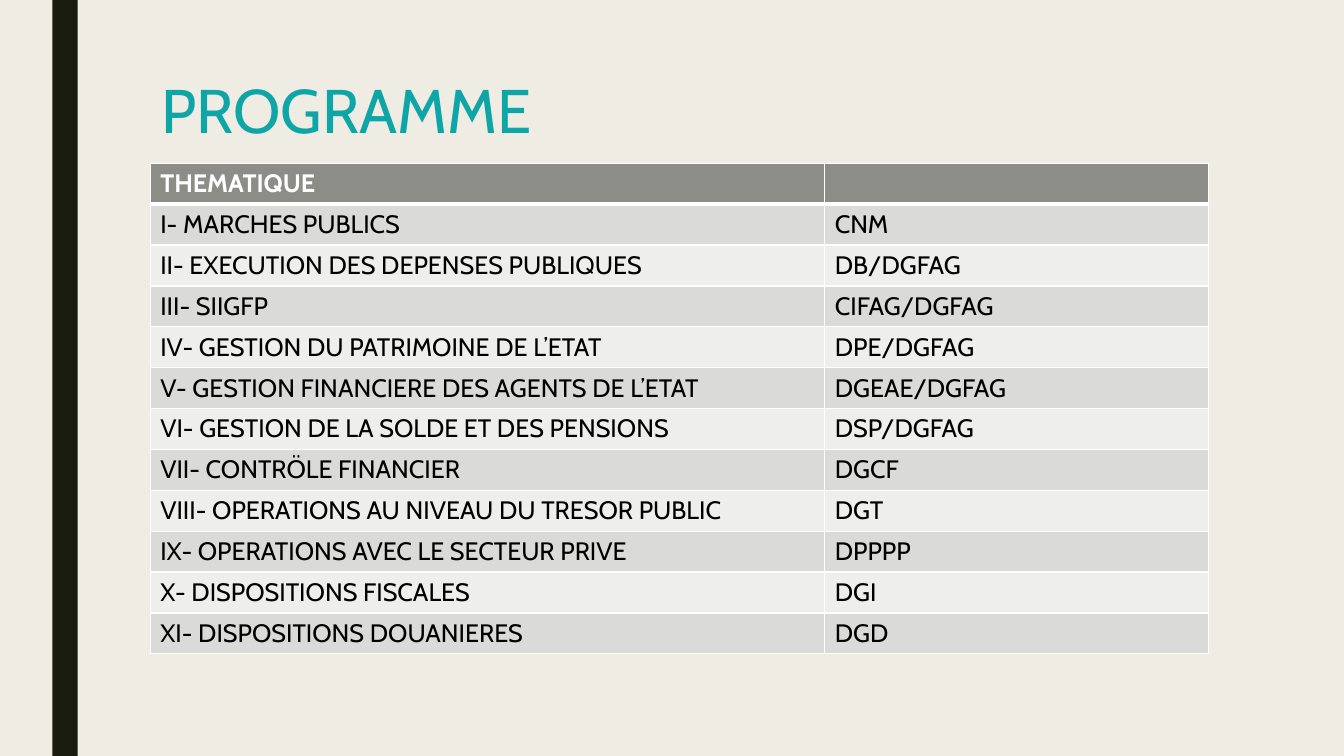
from lxml import etree
from pptx import Presentation
from pptx.dml.color import RGBColor
from pptx.enum.shapes import MSO_SHAPE
from pptx.enum.text import MSO_ANCHOR, PP_ALIGN
from pptx.oxml.ns import qn
from pptx.util import Inches, Pt

RECTANGLE = MSO_SHAPE.RECTANGLE
TOP = MSO_ANCHOR.TOP
LEFT = PP_ALIGN.LEFT

PROGRAMME = [
    ("THEMATIQUE", ""),
    ("I- MARCHES PUBLICS", "CNM"),
    ("II- EXECUTION DES DEPENSES PUBLIQUES", "DB/DGFAG"),
    ("III- SIIGFP", "CIFAG/DGFAG"),
    ("IV- GESTION DU PATRIMOINE DE L’ETAT", "DPE/DGFAG"),
    ("V- GESTION FINANCIERE DES AGENTS DE L’ETAT", "DGEAE/DGFAG"),
    ("VI- GESTION DE LA SOLDE ET DES PENSIONS", "DSP/DGFAG"),
    ("VII- CONTRÖLE FINANCIER", "DGCF"),
    ("VIII- OPERATIONS AU NIVEAU DU TRESOR PUBLIC", "DGT"),
    ("IX- OPERATIONS AVEC LE SECTEUR PRIVE", "DPPPP"),
    ("X- DISPOSITIONS FISCALES", "DGI"),
    ("XI- DISPOSITIONS DOUANIERES", "DGD"),
]


def rgb(value):
    return RGBColor.from_string(value)


class SlideBuilder:
    font = "Cabin"
    paper, ink, accent, white = "EFEDE3", "191B0E", "0DA5A5", "FFFFFF"
    header_fill, odd_fill, even_fill = "8C8D86", "DADBD9", "EEEEED"

    def __init__(self, slide):
        self.slide = slide
        background = slide.background.fill
        background.solid()
        background.fore_color.rgb = rgb(self.paper)

    def bar(self, left, top, width, height):
        shape = self.slide.shapes.add_shape(
            RECTANGLE, Inches(left), Inches(top), Inches(width), Inches(height))
        shape.shadow.inherit = False
        shape.fill.solid()
        shape.fill.fore_color.rgb = rgb(self.ink)
        shape.line.fill.background()

    def span(self, para, text, size, color, bold=False):
        para.alignment = LEFT
        span = para.add_run()
        span.text = text
        span.font.name = self.font
        span.font.size = Pt(size)
        span.font.bold = bold
        span.font.color.rgb = rgb(color)

    def title(self, text, left, top, width, height):
        box = self.slide.shapes.add_textbox(
            Inches(left), Inches(top), Inches(width), Inches(height))
        frame = box.text_frame
        frame.word_wrap = True
        frame.vertical_anchor = TOP
        para = frame.paragraphs[0]
        para.line_spacing = 0.89
        self.span(para, text, 44, self.accent)

    def border(self, cell, side, points):
        """Append one white edge; edges go in before the cell's fill."""
        properties = cell._tc.get_or_add_tcPr()
        line = etree.SubElement(properties, qn(f"a:ln{side}"), w=str(Pt(points)))
        fill = etree.SubElement(line, qn("a:solidFill"))
        etree.SubElement(fill, qn("a:srgbClr"), val=self.white)

    def table(self, rows, left, top, widths, height):
        table = self.slide.shapes.add_table(
            len(rows), len(widths), Inches(left), Inches(top),
            Inches(sum(widths)), Inches(height)).table
        for column, width in zip(table.columns, widths):
            column.width = Inches(width)
        for row_index, texts in enumerate(rows):
            for column_index, text in enumerate(texts):
                self.cell(table.cell(row_index, column_index), text, row_index)

    def cell(self, cell, text, row_index):
        header = row_index == 0
        thick = {"T": row_index == 1, "B": header}
        for side in "LRTB":
            self.border(cell, side, 3 if thick.get(side) else 1)
        band = self.odd_fill if row_index % 2 else self.even_fill
        cell.fill.solid()
        cell.fill.fore_color.rgb = rgb(self.header_fill if header else band)
        color = self.white if header else "000000"
        self.span(cell.text_frame.paragraphs[0], text, 18, color, header)


def main():
    deck = Presentation()
    deck.slide_width, deck.slide_height = Inches(13.33), Inches(7.5)
    page = SlideBuilder(deck.slides.add_slide(deck.slide_layouts[6]))
    page.bar(0.52, 0, 0.25, 7.5)
    page.title("PROGRAMME", 1.5, 0.75, 10.5, 1.62)
    page.table(PROGRAMME, 1.49, 1.62, [6.69, 3.81], 4.87)
    deck.save("out.pptx")


if __name__ == "__main__":
    main()
